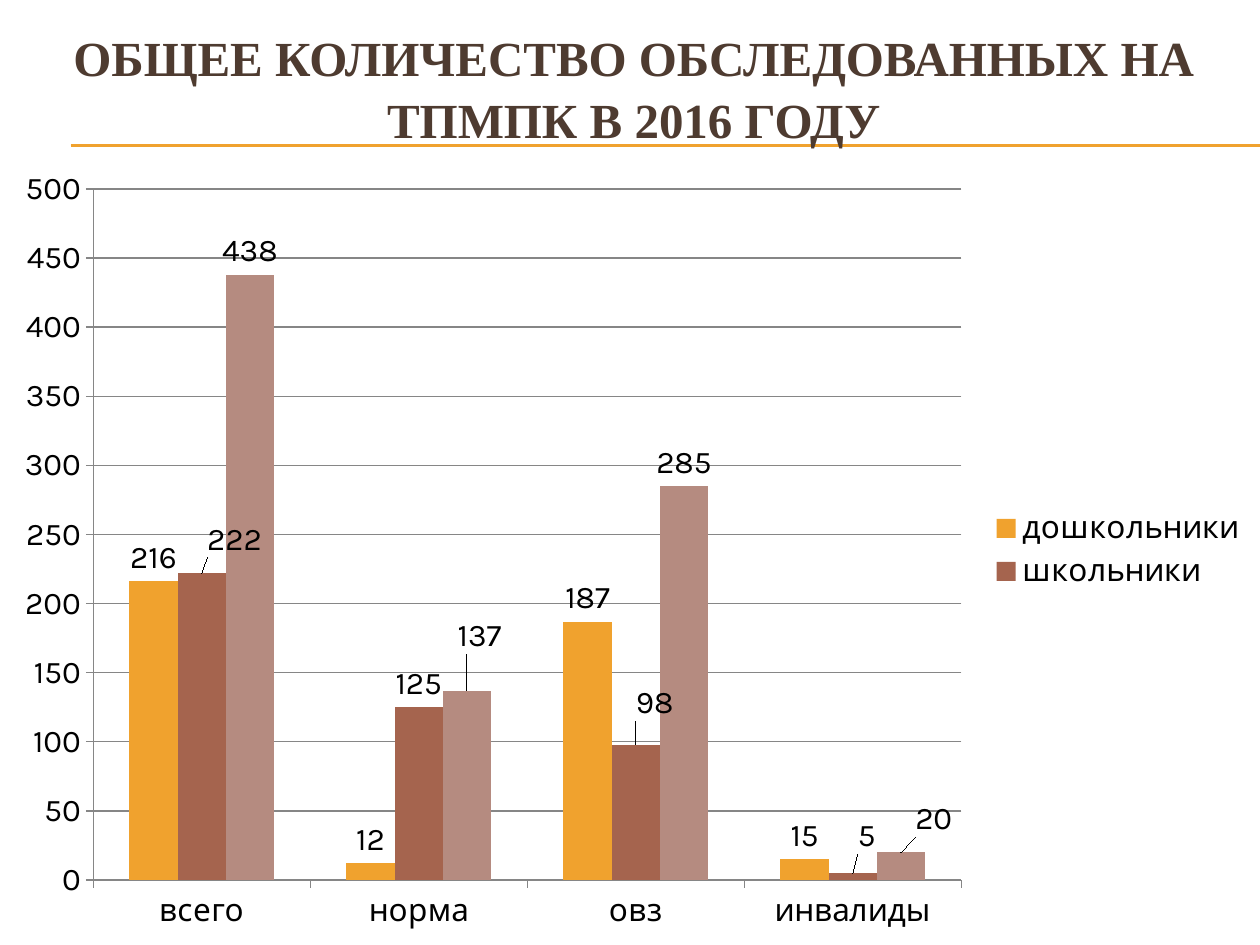
from lxml.etree import SubElement
from pptx import Presentation
from pptx.chart.data import CategoryChartData
from pptx.dml.color import RGBColor
from pptx.enum.chart import XL_CHART_TYPE, XL_LABEL_POSITION, XL_LEGEND_POSITION, XL_TICK_MARK
from pptx.enum.shapes import MSO_CONNECTOR
from pptx.enum.text import MSO_ANCHOR, PP_ALIGN
from pptx.oxml import parse_xml
from pptx.oxml.ns import nsdecls, qn
from pptx.util import Inches, Pt

WIDTH, HEIGHT = Inches(10), Inches(7.5)
AMBER = RGBColor(0xF0, 0xA2, 0x2E)
BROWN = RGBColor(0xA5, 0x64, 0x4E)
ROSE = RGBColor(0xB5, 0x8B, 0x80)
TITLE_COLOR = RGBColor(0x4E, 0x3B, 0x30)
BLACK = RGBColor(0, 0, 0)
GREY = RGBColor(0x86, 0x86, 0x86)
CHART_FONT = "Karla"

CATEGORIES = ["всего", "норма", "овз", "инвалиды"]
# Name, values, colour, label shifts by point as shares of the chart's size
SERIES = [
    ("дошкольники", [216, 12, 187, 15], AMBER, {}),
    ("школьники", [222, 125, 98, 5], BROWN,
     {0: (0.026, -0.013), 2: (0.015, -0.023), 3: (0.011, -0.018)}),
    ("Series 3", [438, 137, 285, 20], ROSE,
     {1: (0.01, -0.04), 3: (0.026, -0.013)}),
]


def add_title(slide, text, *, size, color, font_name):
    box = slide.shapes.add_textbox(Inches(0.28), Inches(0.29), Inches(9.5), Inches(0.79))
    frame = box.text_frame
    frame.word_wrap = True
    frame.vertical_anchor = MSO_ANCHOR.MIDDLE
    paragraph = frame.paragraphs[0]
    paragraph.alignment = PP_ALIGN.CENTER
    paragraph.line_spacing = 1.05
    run = paragraph.add_run()
    run.text = text
    format_font(run.font, size, color, font_name)
    run.font.bold = True


def format_font(font, size=18, color=BLACK, name=CHART_FONT):
    font.size = Pt(size)
    font.name = name
    font.color.rgb = color


def add_rule(slide, top):
    """Draw a thin line from the left margin to the slide's right edge."""
    rule = slide.shapes.add_connector(
        MSO_CONNECTOR.STRAIGHT, Inches(0.56), top, WIDTH, top)
    rule.line.color.rgb = AMBER
    rule.line.width = Pt(0.75)
    SubElement(rule._element.spPr, qn("a:effectLst"))


def manual_layout(**values):
    """Return a chart layout element; underscored tags are given in schema order."""
    children = "".join(f'<c:{tag} val="{value}"/>' for tag, value in values.items())
    return parse_xml(
        f'<c:layout {nsdecls("c")}><c:manualLayout>{children}</c:manualLayout></c:layout>')


def format_axis(axis):
    axis.major_tick_mark = XL_TICK_MARK.OUTSIDE
    axis.minor_tick_mark = XL_TICK_MARK.NONE
    axis.format.line.color.rgb = GREY
    axis.format.line.width = Pt(0.75)
    format_font(axis.tick_labels.font)


def format_series(series, color, shifts):
    series.format.fill.solid()
    series.format.fill.fore_color.rgb = color
    labels = series.data_labels
    labels.show_value = True
    labels.position = XL_LABEL_POSITION.OUTSIDE_END
    format_font(labels.font)
    for index, (x, y) in shifts.items():
        label = series.points[index].data_label
        format_font(label.font)
        label.position = XL_LABEL_POSITION.OUTSIDE_END
        element = series._element.xpath(f'c:dLbls/c:dLbl[c:idx/@val="{index}"]')[0]
        element.insert(1, manual_layout(x=x, y=y))


def add_legend(chart, hidden_index):
    chart.has_legend = True
    legend = chart.legend
    legend.position = XL_LEGEND_POSITION.RIGHT
    legend.include_in_layout = False
    format_font(legend.font)
    entry = parse_xml(
        f'<c:legendEntry {nsdecls("c")}><c:idx val="{hidden_index}"/>'
        '<c:delete val="1"/></c:legendEntry>')
    legend._element.insert(1, entry)


def add_column_chart(slide):
    data = CategoryChartData()
    data.categories = CATEGORIES
    for name, values, _, _ in SERIES:
        data.add_series(name, values)
    top = Inches(1.23)
    chart = slide.shapes.add_chart(
        XL_CHART_TYPE.COLUMN_CLUSTERED, 0, top, WIDTH, HEIGHT - top, data).chart
    chart.has_title = False
    format_font(chart.font)
    plot = chart.plots[0]
    plot.gap_width = 150
    plot.overlap = 0
    plot.vary_by_categories = False
    for series, (_, _, color, shifts) in zip(plot.series, SERIES):
        format_series(series, color, shifts)

    format_axis(chart.category_axis)
    value_axis = chart.value_axis
    format_axis(value_axis)
    value_axis.minimum_scale, value_axis.maximum_scale = 0, 500
    value_axis.major_unit = 50
    value_axis.has_major_gridlines = True
    value_axis.major_gridlines.format.line.color.rgb = GREY
    value_axis.major_gridlines.format.line.width = Pt(0.75)
    add_legend(chart, hidden_index=2)

    plot_area = plot._element.getparent()
    for layout in plot_area.findall(qn("c:layout")):
        plot_area.remove(layout)
    plot_area.insert(0, manual_layout(
        layoutTarget="inner", xMode="edge", yMode="edge",
        x=0.074, y=0.043, w=0.689, h=0.875))


def main():
    presentation = Presentation()
    presentation.slide_width, presentation.slide_height = WIDTH, HEIGHT
    slide = presentation.slides.add_slide(presentation.slide_layouts[6])
    for top in (1.15, 1.16):
        add_rule(slide, Inches(top))
    add_column_chart(slide)
    add_title(slide, "ОБЩЕЕ КОЛИЧЕСТВО ОБСЛЕДОВАННЫХ НА ТПМПК В 2016 ГОДУ",
              size=28, color=TITLE_COLOR, font_name="Times New Roman")
    presentation.save("out.pptx")


if __name__ == "__main__":
    main()
